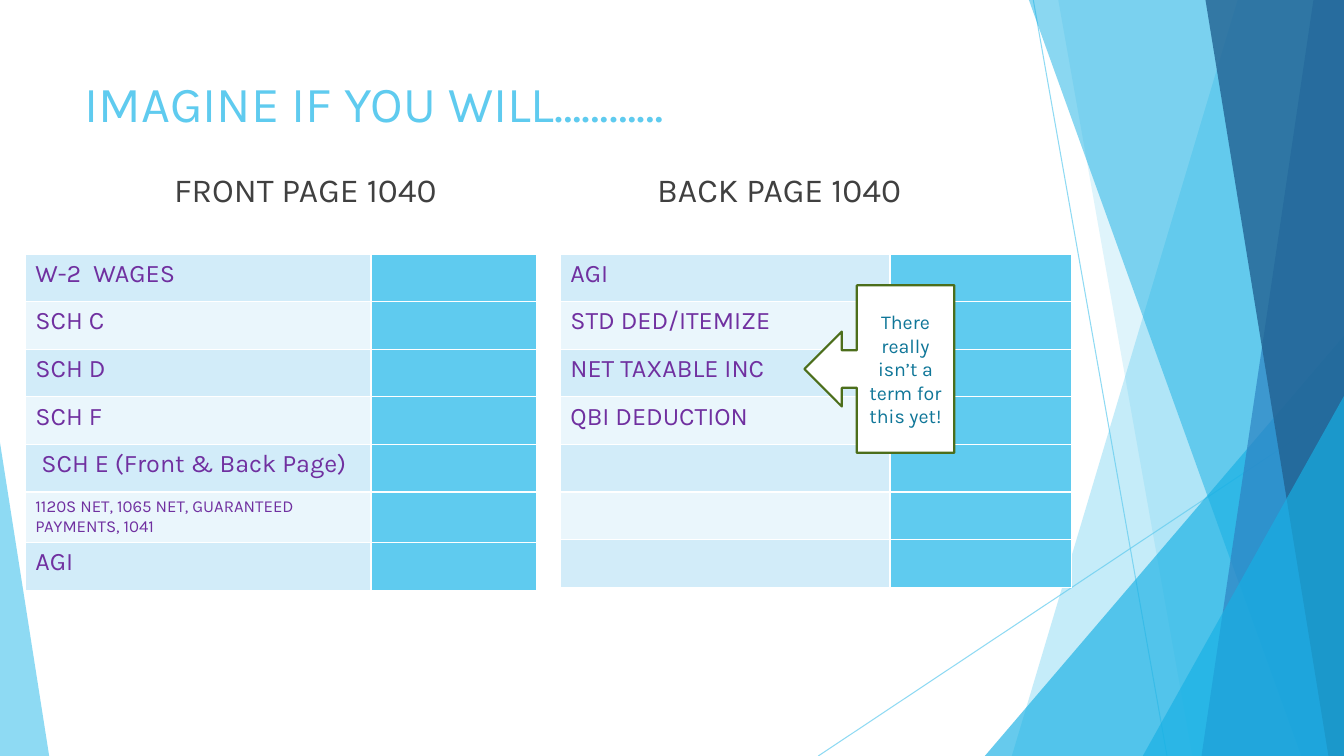
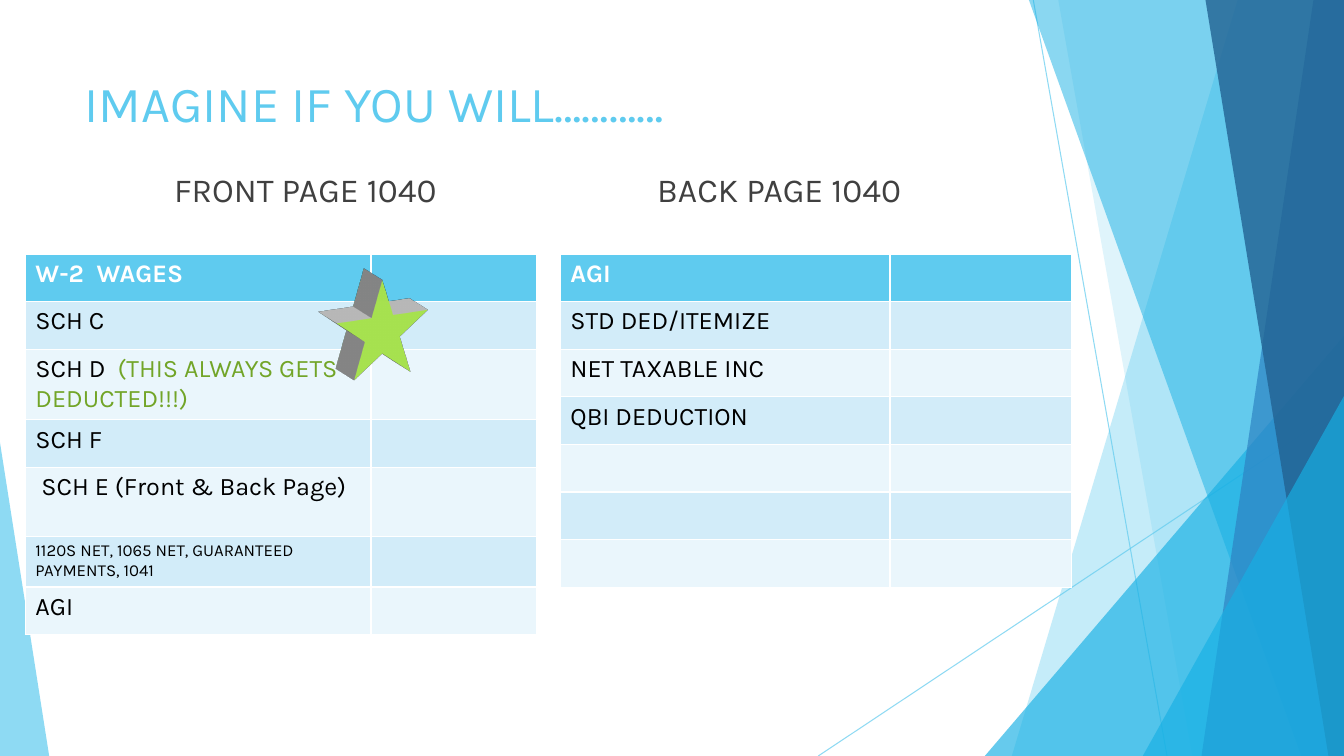
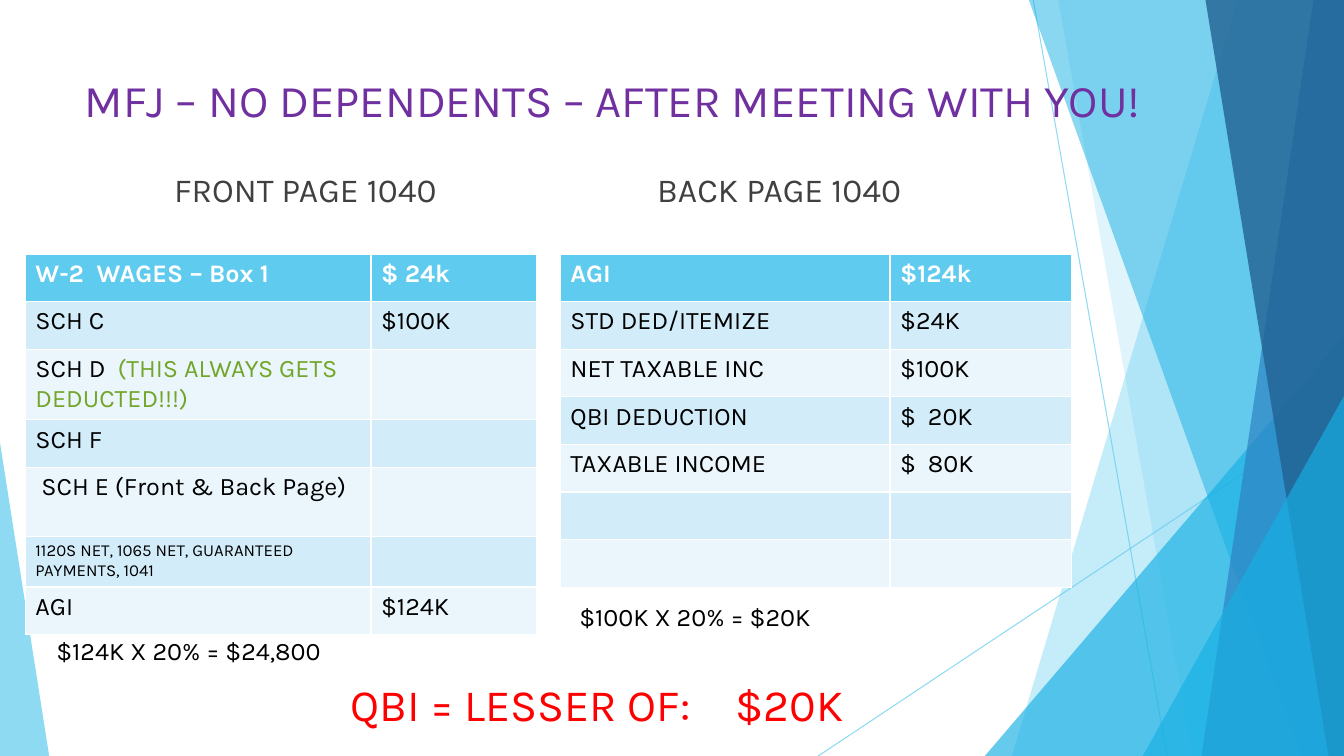
import lxml.etree
import pptx
import pptx.dml.color
import pptx.enum.shapes
import pptx.enum.text
import pptx.oxml.ns
import pptx.util

Cm = pptx.util.Cm
Pt = pptx.util.Pt
RGBColor = pptx.dml.color.RGBColor
Shape = pptx.enum.shapes.MSO_SHAPE
Align = pptx.enum.text.PP_ALIGN
Anchor = pptx.enum.text.MSO_ANCHOR
qn = pptx.oxml.ns.qn

SKY = RGBColor(0x5F, 0xCB, 0xEF)
CYAN = RGBColor(0x17, 0xB0, 0xE4)
BLUE = RGBColor(0x2E, 0x83, 0xC3)
NAVY = RGBColor(0x22, 0x62, 0x92)
TEAL = RGBColor(0x0F, 0x76, 0x98)
PALE = RGBColor(0xD2, 0xEC, 0xF9)
PALER = RGBColor(0xEA, 0xF6, 0xFC)
PURPLE = RGBColor(0x70, 0x30, 0xA0)
GREEN = RGBColor(0x72, 0xA5, 0x28)
LIME = RGBColor(0x96, 0xD1, 0x41)
OLIVE = RGBColor(0x4C, 0x6E, 0x1B)
GRAY = RGBColor(0x40, 0x40, 0x40)
RED = RGBColor(0xFF, 0, 0)
BLACK = RGBColor(0, 0, 0)
WHITE = RGBColor(0xFF, 0xFF, 0xFF)

FONT = "Karla"
WIDTH, HEIGHT = 33.87, 19.05
MARGIN = 1.88
TABLE_TOP = 6.4
ROW, SMALL_ROW, TALL_ROW = 1.2, 1.25, 1.74
FRONT_LEFT, FRONT_COLUMNS = 0.64, (8.71, 4.17)
BACK_LEFT, BACK_COLUMNS = 14.12, (8.31, 4.57)

FRONT_HEIGHTS = [ROW, ROW, ROW, ROW, ROW, SMALL_ROW, ROW]
FRONT_TALL_HEIGHTS = [ROW, ROW, TALL_ROW, ROW, TALL_ROW, SMALL_ROW, ROW]
BACK_HEIGHTS = [ROW] * 7

IMAGINE = "IMAGINE IF YOU WILL…………"
SCH_D_NOTE = [("SCH D  ", {}), ("(THIS ALWAYS GETS DEDUCTED!!!)", {"color": GREEN})]
PASS_THROUGH = [("1120S NET, 1065 NET, GUARANTEED PAYMENTS, 1041", {"size": 12})]


def front_labels(wages="W-2  WAGES", sch_d=SCH_D_NOTE):
    return [wages, "SCH C", sch_d, "SCH F", " SCH E (Front & Back Page)", PASS_THROUGH, "AGI"]


def back_labels(fifth=""):
    return ["AGI", "STD DED/ITEMIZE", "NET TAXABLE INC", "QBI DEDUCTION", fifth, "", ""]


def format_run(run, size, color, bold=False, spacing=0):
    run.font.name = FONT
    run.font.size = Pt(size)
    run.font.color.rgb = color
    run.font.bold = bold
    if spacing:
        run.font._element.set("spc", str(spacing * 100))


def write(frame, content, align=Align.LEFT, anchor=Anchor.TOP, **style):
    """Write a string, or a list of (text, style changes) runs, as one paragraph."""
    frame.word_wrap = True
    frame.vertical_anchor = anchor
    paragraph = frame.paragraphs[0]
    paragraph.alignment = align
    runs = [(content, {})] if isinstance(content, str) else content
    for text, changes in runs:
        run = paragraph.add_run()
        run.text = text
        format_run(run, **{**style, **changes})


def set_opacity(shape, percent):
    color = shape.element.xpath("./p:spPr//a:srgbClr")[0]
    lxml.etree.SubElement(color, qn("a:alpha")).set("val", str(percent * 1000))


class Deck:
    def __init__(self):
        self.presentation = pptx.Presentation()
        self.presentation.slide_width = Cm(WIDTH)
        self.presentation.slide_height = Cm(HEIGHT)
        self.layout = self.presentation.slide_layouts[5]
        self.slide = None

    def add_slide(self, title, width=23.88, height=1.85, size=36, color=SKY):
        first = self.slide is None
        self.slide = self.presentation.slides.add_slide(self.layout)
        if first:
            self.add_backdrop()
        placeholder = self.slide.shapes.title
        placeholder.left, placeholder.top = Cm(MARGIN), Cm(1.7)
        placeholder.width, placeholder.height = Cm(width), Cm(height)
        placeholder.text_frame.auto_size = pptx.enum.text.MSO_AUTO_SIZE.NONE
        write(placeholder.text_frame, title, size=size, color=color)
        for left, heading in ((MARGIN, "FRONT PAGE 1040"), (13.82, "BACK PAGE 1040")):
            self.add_text(heading, left, 3.81, 11.63, 1.6, size=24, color=GRAY,
                          align=Align.CENTER, anchor=Anchor.BOTTOM)

    def add_backdrop(self):
        """Draw the facets as a group and move it to the layout, for all slides."""
        group = self.slide.shapes.add_group_shape()
        self.add_ray(group, 26.04, 0, 29.41, HEIGHT)
        self.add_ray(group, WIDTH, 10.24, 20.62, HEIGHT)
        self.add_facet(group, 31.19, 25.5, SKY, 36)
        self.add_facet(group, 26.67, 30.05, SKY, 20)
        self.add_triangle(group, 24.82, 8.46, 9.05, 1, CYAN, 66)
        self.add_facet(group, 25.93, 32.79, CYAN, 50)
        self.add_facet(group, 33.1, 30.28, BLUE, 70)
        self.add_facet(group, 30.38, 33.48, NAVY, 80)
        self.add_triangle(group, 28.8, 9.98, 5.07, 1, CYAN, 66)
        self.add_triangle(group, 0, 11.15, 1.24, 0, SKY, 70)
        for number, properties in enumerate(group.element.xpath(".//p:cNvPr"), start=100):
            properties.set("id", str(number))
        self.layout.shapes.element.append(group.element)

    def add_ray(self, group, *ends):
        ray = group.shapes.add_connector(
            pptx.enum.shapes.MSO_CONNECTOR.STRAIGHT, *map(Cm, ends))
        ray.line.color.rgb = SKY
        ray.line.width = Pt(0.75)
        set_opacity(ray, 70)
        lxml.etree.SubElement(ray.element.spPr, qn("a:effectLst"))

    def add_facet(self, group, top_x, bottom_x, color, opacity):
        """Fill the area between a slanted edge and the right side of the slide."""
        builder = group.shapes.build_freeform(Cm(top_x), 0)
        builder.add_line_segments([(Cm(WIDTH), 0), (Cm(WIDTH), Cm(HEIGHT)),
                                   (Cm(bottom_x), Cm(HEIGHT))])
        self.paint(builder.convert_to_shape(), color, opacity=opacity)

    def add_triangle(self, group, left, top, width, apex, color, opacity):
        triangle = group.shapes.add_shape(Shape.ISOSCELES_TRIANGLE, Cm(left), Cm(top),
                                          Cm(width), Cm(HEIGHT - top))
        triangle.adjustments[0] = apex
        self.paint(triangle, color, opacity=opacity)

    def paint(self, shape, fill, line=None, opacity=None):
        shape.shadow.inherit = False
        shape.fill.solid()
        shape.fill.fore_color.rgb = fill
        if line is None:
            shape.line.fill.background()
        else:
            shape.line.color.rgb = line
            shape.line.width = Pt(1.5)
        if opacity is not None:
            set_opacity(shape, opacity)

    def add_shape(self, kind, left, top, width, height, fill, line=None):
        shape = self.slide.shapes.add_shape(kind, Cm(left), Cm(top), Cm(width), Cm(height))
        self.paint(shape, fill, line)
        return shape

    def add_text(self, content, left, top, width, height, **style):
        box = self.slide.shapes.add_textbox(Cm(left), Cm(top), Cm(width), Cm(height))
        write(box.text_frame, content, **style)

    def add_table(self, left, columns, heights, labels, amounts=None, header=True):
        """Add a label and amount table; without a header the amounts are solid blue."""
        table = self.slide.shapes.add_table(
            len(heights), 2, Cm(left), Cm(TABLE_TOP), Cm(sum(columns)), Cm(sum(heights))).table
        table.first_row = header
        table.horz_banding = False
        for column, width in zip(table.columns, columns):
            column.width = Cm(width)
        amounts = amounts or {}
        for index, (label, height) in enumerate(zip(labels, heights)):
            table.rows[index].height = Cm(height)
            is_header = header and index == 0
            band = SKY if is_header else (PALE, PALER)[(index - header) % 2]
            color = WHITE if is_header else BLACK if header else PURPLE
            fills = (band, band if header else SKY)
            for column, content in enumerate((label, amounts.get(index, ""))):
                cell = table.cell(index, column)
                cell.fill.solid()
                cell.fill.fore_color.rgb = fills[column]
                if content:
                    write(cell.text_frame, content, size=18, color=color, bold=is_header)

    def add_star(self, left, top, size):
        """Add a star with depth, turned to the right."""
        star = self.add_shape(Shape.STAR_5_POINT, left, top, size, size, LIME)
        properties = star.element.spPr
        scene = lxml.etree.SubElement(properties, qn("a:scene3d"))
        lxml.etree.SubElement(scene, qn("a:camera")).set("prst", "isometricOffAxis1Right")
        light = lxml.etree.SubElement(scene, qn("a:lightRig"))
        light.set("rig", "threePt")
        light.set("dir", "t")
        solid = lxml.etree.SubElement(properties, qn("a:sp3d"))
        solid.set("extrusionH", str(Pt(30)))
        extrusion = lxml.etree.SubElement(solid, qn("a:extrusionClr"))
        lxml.etree.SubElement(extrusion, qn("a:srgbClr")).set("val", str(WHITE))


def main():
    deck = Deck()

    deck.add_slide(IMAGINE)
    deck.add_table(FRONT_LEFT, FRONT_COLUMNS, FRONT_HEIGHTS,
                   front_labels(sch_d="SCH D"), header=False)
    deck.add_table(BACK_LEFT, BACK_COLUMNS, BACK_HEIGHTS, back_labels(), header=False)
    callout = deck.add_shape(Shape.LEFT_ARROW_CALLOUT, 20.27, 7.19, 3.78, 4.22, WHITE, OLIVE)
    write(callout.text_frame, "There really isn’t a term for this yet!", size=14,
          color=TEAL, align=Align.CENTER, anchor=Anchor.MIDDLE)

    deck.add_slide(IMAGINE, height=3.66)
    deck.add_table(FRONT_LEFT, FRONT_COLUMNS, FRONT_TALL_HEIGHTS, front_labels())
    deck.add_table(BACK_LEFT, BACK_COLUMNS, BACK_HEIGHTS, back_labels())
    deck.add_star(8.36, 6.99, 2.54)

    deck.add_slide("MFJ – NO DEPENDENTS – AFTER MEETING WITH YOU!", width=28.24,
                   height=1.6, size=32.4, color=PURPLE)
    deck.add_table(FRONT_LEFT, FRONT_COLUMNS, FRONT_TALL_HEIGHTS,
                   front_labels("W-2  WAGES – Box 1"), {0: "$ 24k", 1: "$100K", 6: "$124K"})
    deck.add_table(BACK_LEFT, BACK_COLUMNS, BACK_HEIGHTS, back_labels("TAXABLE INCOME"),
                   {0: "$124k", 1: "$24K", 2: "$100K", 3: "$  20K", 4: "$  80K"})
    deck.add_text("$124K X 20% = $24,800", 1.17, 15.88, 12.65, 1.02, size=18, color=BLACK)
    deck.add_text("$100K X 20% = $20K", 14.35, 15.04, 12.65, 1.02, size=18, color=BLACK)
    deck.add_text([("QBI = LESSER OF:", {}), (" ", {"spacing": 24}), ("$20K", {})],
                  6.05, 16.92, 17.98, 1.63, size=32, color=RED, align=Align.CENTER)

    deck.presentation.save("out.pptx")


if __name__ == "__main__":
    main()
